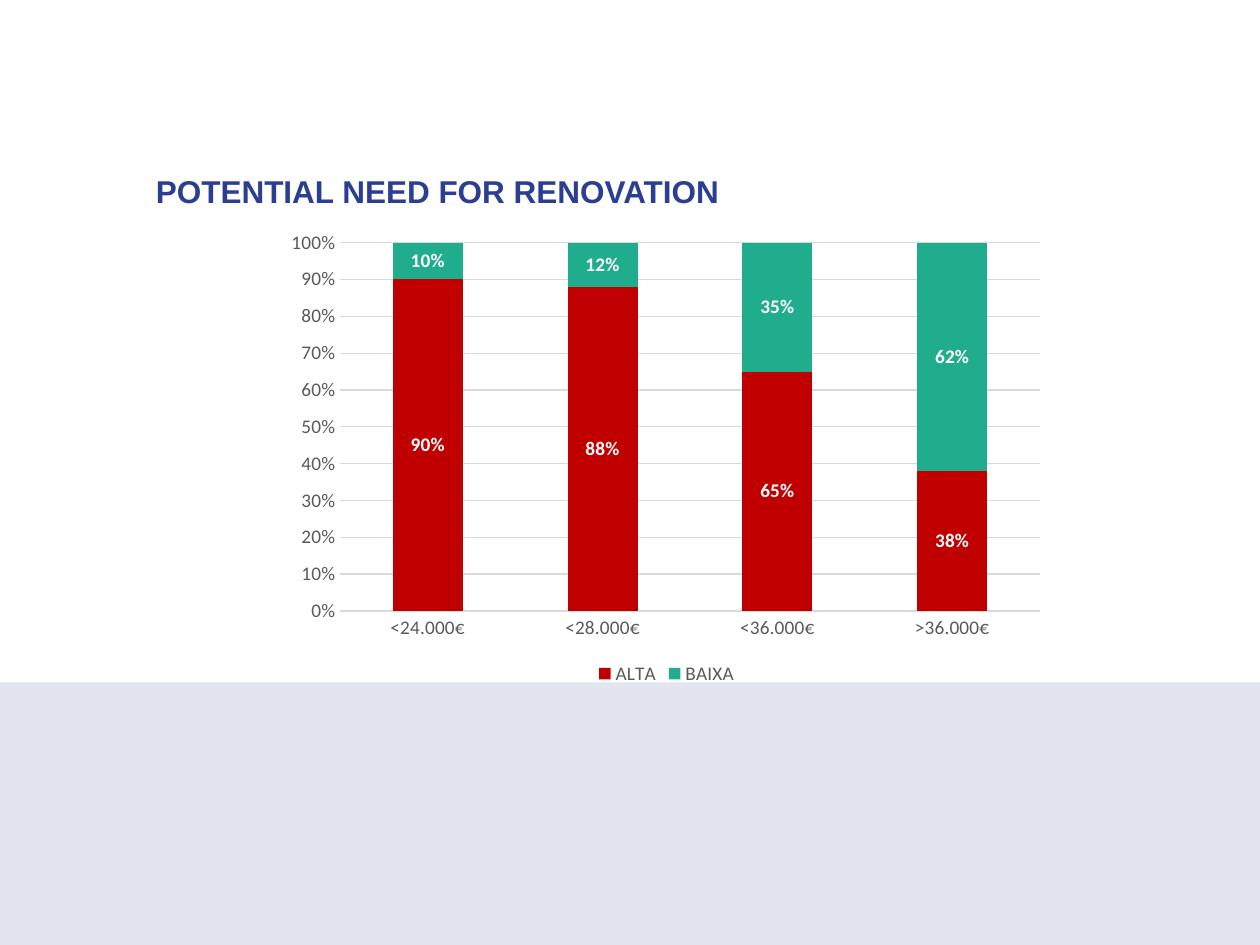
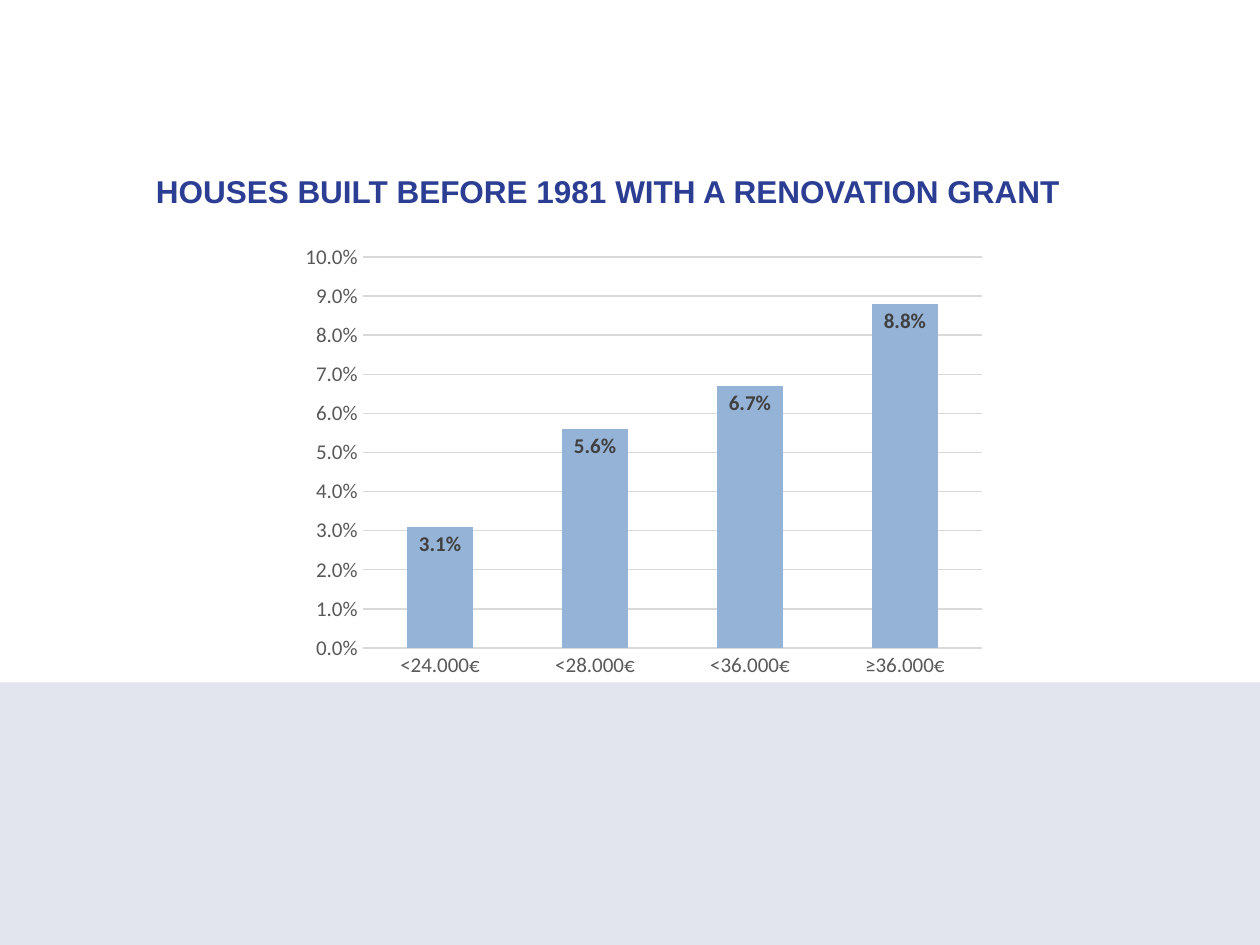
import dataclasses

import pptx
import pptx.chart.data
import pptx.dml.color
import pptx.enum.chart
import pptx.enum.shapes
import pptx.oxml
import pptx.oxml.ns
import pptx.util

Pt = pptx.util.Pt
ChartType = pptx.enum.chart.XL_CHART_TYPE
LabelPosition = pptx.enum.chart.XL_LABEL_POSITION


@dataclasses.dataclass(frozen=True)
class Theme:
    title: str = "2B3E94"
    band: str = "E2E5EE"
    axis_text: str = "595959"
    grid: str = "D9D9D9"
    title_font: str = "Arial"
    chart_font: str = "Calibri"
    title_size: int = 18


theme = Theme()
rgb = pptx.dml.color.RGBColor.from_string


def style_font(font, name, size, color, bold=False):
    font.name = name
    font.size = Pt(size)
    font.bold = bold
    font.color.rgb = rgb(color)


def place_plot(chart, **fractions):
    """Fix the inner plot area as fractions (x, y, w, h) of the chart frame."""
    plot_area = chart._chartSpace.chart.plotArea
    for old_layout in plot_area.findall(pptx.oxml.ns.qn("c:layout")):
        plot_area.remove(old_layout)
    values = "".join(f'<c:{key} val="{value}"/>' for key, value in fractions.items())
    plot_area.insert(0, pptx.oxml.parse_xml(
        f'<c:layout {pptx.oxml.ns.nsdecls("c")}><c:manualLayout>'
        '<c:layoutTarget val="inner"/><c:xMode val="edge"/><c:yMode val="edge"/>'
        f"{values}</c:manualLayout></c:layout>"))


slides = [
    dict(
        title="POTENTIAL NEED FOR RENOVATION",
        kind=ChartType.COLUMN_STACKED_100,
        frame=(159, 128, 444, 266.5),
        plot=dict(x=0.08, y=0.04, w=0.9, h=0.79),
        categories=["<24.000€", "<28.000€", "<36.000€", ">36.000€"],
        series=[("ALTA", [0.9, 0.88, 0.65, 0.38], "C00000"),
                ("BAIXA", [0.1, 0.12, 0.35, 0.62], "20AD8E")],
        size=11, number_format="0%", label_color="FFFFFF",
        label_position=LabelPosition.CENTER,
        gap=150, overlap=100, maximum=1, step=0.1, legend=True,
    ),
    dict(
        title="HOUSES BUILT BEFORE 1981 WITH A RENOVATION GRANT",
        kind=ChartType.COLUMN_CLUSTERED,
        frame=(167, 134, 402.5, 257),
        plot=dict(x=0.1, y=0.05, w=0.88, h=0.87),
        categories=["<24.000€", "<28.000€", "<36.000€", "≥36.000€"],
        series=[("Series 1", [0.031, 0.056, 0.067, 0.088], "95B3D7")],
        size=12, number_format="0.0%", label_color="404040",
        label_position=LabelPosition.INSIDE_END,
        gap=133, overlap=14, maximum=0.1, step=0.01, legend=False,
    ),
]

deck = pptx.Presentation()
deck.slide_width, deck.slide_height = Pt(720), Pt(540)

for content in slides:
    page = deck.slides.add_slide(deck.slide_layouts[6])

    band = page.shapes.add_shape(
        pptx.enum.shapes.MSO_SHAPE.RECTANGLE, Pt(0), Pt(390), Pt(720), Pt(150))
    band.shadow.inherit = False
    band.fill.solid()
    band.fill.fore_color.rgb = rgb(theme.band)
    band.line.fill.background()

    title_box = page.shapes.add_textbox(Pt(82), Pt(94.5), Pt(595.5), Pt(29))
    title_box.text_frame.word_wrap = True
    title_box.text_frame.text = content["title"]
    title_span = title_box.text_frame.paragraphs[0].runs[0]
    style_font(title_span.font, theme.title_font, theme.title_size, theme.title, True)

    data = pptx.chart.data.CategoryChartData(number_format=content["number_format"])
    data.categories = content["categories"]
    for name, values, _ in content["series"]:
        data.add_series(name, values)
    chart = page.shapes.add_chart(
        content["kind"], *map(Pt, content["frame"]), data).chart
    chart.has_title = False
    style_font(chart.font, theme.chart_font, content["size"], theme.axis_text)
    place_plot(chart, **content["plot"])

    chart.has_legend = content["legend"]
    if chart.has_legend:
        chart.legend.position = pptx.enum.chart.XL_LEGEND_POSITION.BOTTOM
        chart.legend.include_in_layout = False
        style_font(chart.legend.font, theme.chart_font, content["size"], theme.axis_text)

    for axis in (chart.category_axis, chart.value_axis):
        axis.major_tick_mark = pptx.enum.chart.XL_TICK_MARK.NONE
        axis.minor_tick_mark = pptx.enum.chart.XL_TICK_MARK.NONE
        style_font(axis.tick_labels.font, theme.chart_font, content["size"], theme.axis_text)
    value_axis = chart.value_axis
    value_axis.minimum_scale, value_axis.maximum_scale = 0, content["maximum"]
    value_axis.major_unit = content["step"]
    value_axis.tick_labels.number_format = content["number_format"]
    value_axis.tick_labels.number_format_is_linked = False
    value_axis.format.line.fill.background()
    for line in (chart.category_axis.format.line, value_axis.major_gridlines.format.line):
        line.color.rgb = rgb(theme.grid)
        line.width = Pt(0.75)

    plot = chart.plots[0]
    plot.vary_by_categories = False
    plot.gap_width, plot.overlap = content["gap"], content["overlap"]
    for series, (_, _, color) in zip(plot.series, content["series"]):
        series.format.fill.solid()
        series.format.fill.fore_color.rgb = rgb(color)
        labels = series.data_labels
        labels.show_value = True
        labels.number_format = content["number_format"]
        labels.number_format_is_linked = False
        labels.position = content["label_position"]
        style_font(labels.font, theme.chart_font, content["size"],
                   content["label_color"], True)

deck.save("out.pptx")
